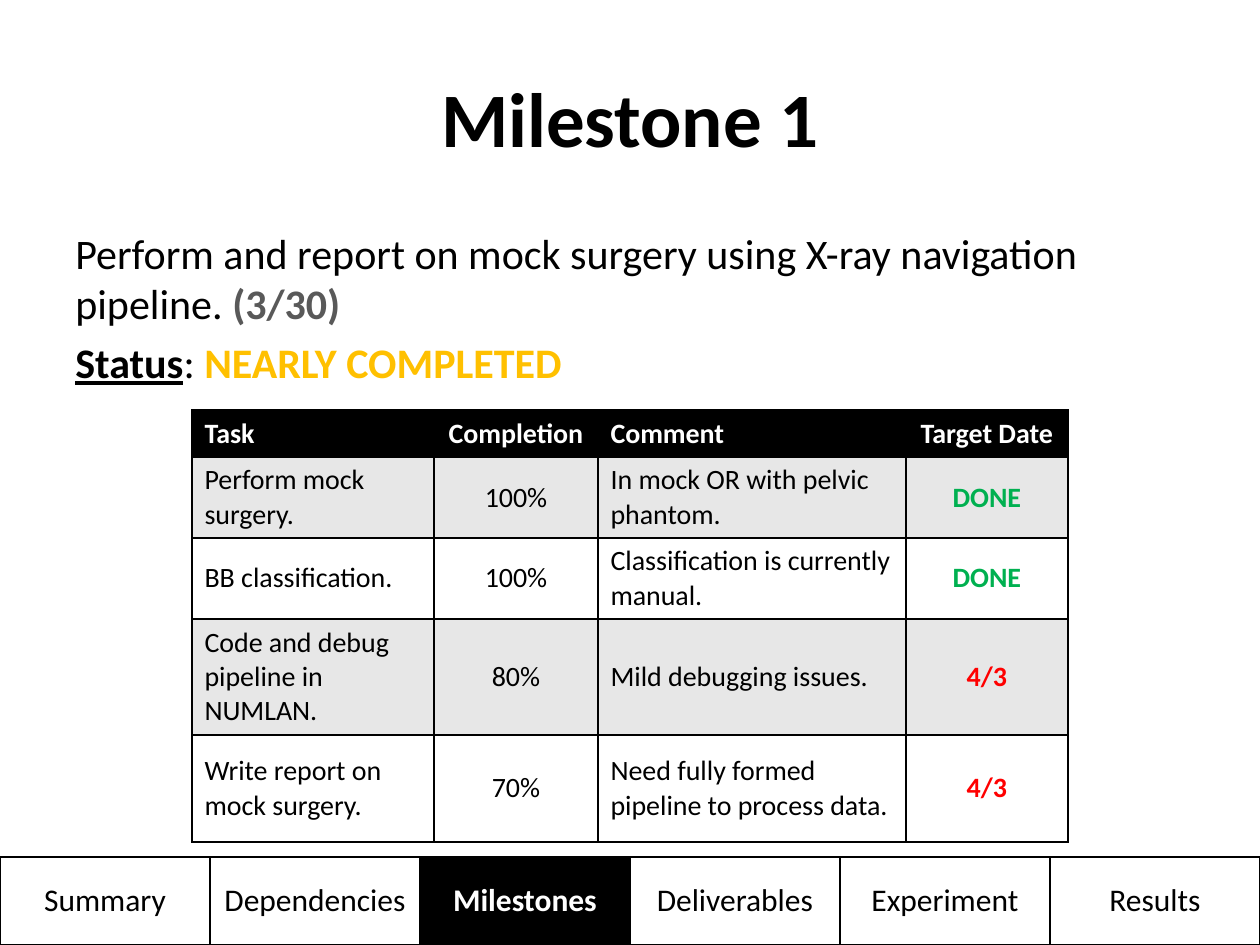
from dataclasses import dataclass
from lxml.etree import SubElement as Sub
from pptx import Presentation
from pptx.dml.color import RGBColor as Rgb
from pptx.enum.text import MSO_ANCHOR as Anchor, PP_ALIGN as Align
from pptx.oxml.ns import qn
from pptx.util import Emu, Pt


@dataclass(frozen=True)
class Theme:
    font: str = "Calibri"
    black: str = "000000"
    white: str = "FFFFFF"
    band: str = "E7E7E7"
    grey: str = "595959"
    gold: str = "FFC000"
    green: str = "00B050"
    red: str = "FF0000"
    title: int = 44
    body: int = 24
    nav: int = 18
    task: int = 16
    gap: float = 4.8
    line: int = 1


T = Theme()
SCALE = 914400 / 126
WIDTH, HEIGHT = 1260, 945
TABS = ["Summary", "Dependencies", "Milestones", "Deliverables", "Experiment", "Results"]
HEAD = ["Task", "Completion", "Comment", "Target Date"]
TASKS = [
    ["Perform mock surgery.", "100%", "In mock OR with pelvic phantom.", "DONE"],
    ["BB classification.", "100%", "Classification is currently manual.", "DONE"],
    ["Code and debug pipeline in NUMLAN.", "80%", "Mild debugging issues.", "4/3"],
    ["Write report on mock surgery.", "70%", "Need fully formed pipeline to process data.", "4/3"],
]


def px(n):
    return Emu(round(n * SCALE))


def style(run, size, color=T.black, bold=False, under=False):
    font = run.font
    font.name, font.size = T.font, Pt(size)
    font.bold, font.underline = bold, under
    font.color.rgb = Rgb.from_string(color)


def add_box(slide, left, top, width, height, anchor):
    box = slide.shapes.add_textbox(px(left), px(top), px(width), px(height))
    frame = box.text_frame
    frame.word_wrap = True
    frame.vertical_anchor = anchor
    return frame


def add_para(para, *parts):
    para.space_before = Pt(T.gap)
    for text, *look in parts:
        run = para.add_run()
        run.text = text
        style(run, T.body, *look)


def add_edges(cell):
    props = cell._tc.get_or_add_tcPr()
    for side in ("lnL", "lnR", "lnT", "lnB"):
        line = Sub(props, qn(f"a:{side}"), w=str(Pt(T.line)))
        fill = Sub(line, qn("a:solidFill"))
        Sub(fill, qn("a:srgbClr"), val=T.black)


def set_cell(cell, text, size, fill, color, bold, center):
    add_edges(cell)
    cell.fill.solid()
    cell.fill.fore_color.rgb = Rgb.from_string(fill)
    cell.vertical_anchor = Anchor.MIDDLE
    cell.text_frame.text = text
    para = cell.text_frame.paragraphs[0]
    para.alignment = Align.CENTER if center else Align.LEFT
    style(para.runs[0], size, color, bold)


def add_grid(slide, left, top, cols, rows):
    frame = slide.shapes.add_table(
        len(rows), len(cols), px(left), px(top), px(sum(cols)), px(sum(rows)))
    table = frame.table
    table.first_row = table.horz_banding = False
    for col, width in zip(table.columns, cols):
        col.width = px(width)
    for row, height in zip(table.rows, rows):
        row.height = px(height)
    return table


def add_nav(slide, active):
    height = 88
    count = len(TABS)
    table = add_grid(slide, 0, HEIGHT - height, [WIDTH // count] * count, [height])
    for i, name in enumerate(TABS):
        cell = table.cell(0, i)
        cell.margin_left = cell.margin_right = px(6)
        on = name == active
        fill, color = (T.black, T.white) if on else (T.white, T.black)
        set_cell(cell, name, T.nav, fill, color, on, True)


def add_tasks(slide):
    table = add_grid(slide, 192, 410, [242, 164, 308, 162], [47, 81, 81, 116, 107])
    for r, row in enumerate([HEAD] + TASKS):
        for c, text in enumerate(row):
            date = c == len(HEAD) - 1
            if r == 0:
                fill, color = T.black, T.white
            else:
                fill = T.band if r % 2 else T.white
                color = T.black
                if date:
                    color = T.green if text == "DONE" else T.red
            set_cell(table.cell(r, c), text, T.task, fill, color, r == 0 or date, c % 2 == 1)


def add_title(slide, text):
    frame = add_box(slide, 63, 38, 1134, 158, Anchor.MIDDLE)
    frame.text = text
    para = frame.paragraphs[0]
    para.alignment = Align.CENTER
    style(para.runs[0], T.title, bold=True)


def add_body(slide):
    frame = add_box(slide, 63, 221, 1134, 624, Anchor.TOP)
    add_para(
        frame.paragraphs[0],
        ("Perform and report on mock surgery using X-ray navigation pipeline. ",),
        ("(3/30)", T.grey, True))
    add_para(
        frame.add_paragraph(),
        ("Status", T.black, True, True),
        (": ",),
        ("NEARLY COMPLETED", T.gold, True))


def main():
    deck = Presentation()
    deck.slide_width, deck.slide_height = px(WIDTH), px(HEIGHT)
    slide = deck.slides.add_slide(deck.slide_layouts[6])
    add_title(slide, "Milestone 1")
    add_body(slide)
    add_nav(slide, "Milestones")
    add_tasks(slide)
    deck.save("out.pptx")


if __name__ == "__main__":
    main()
